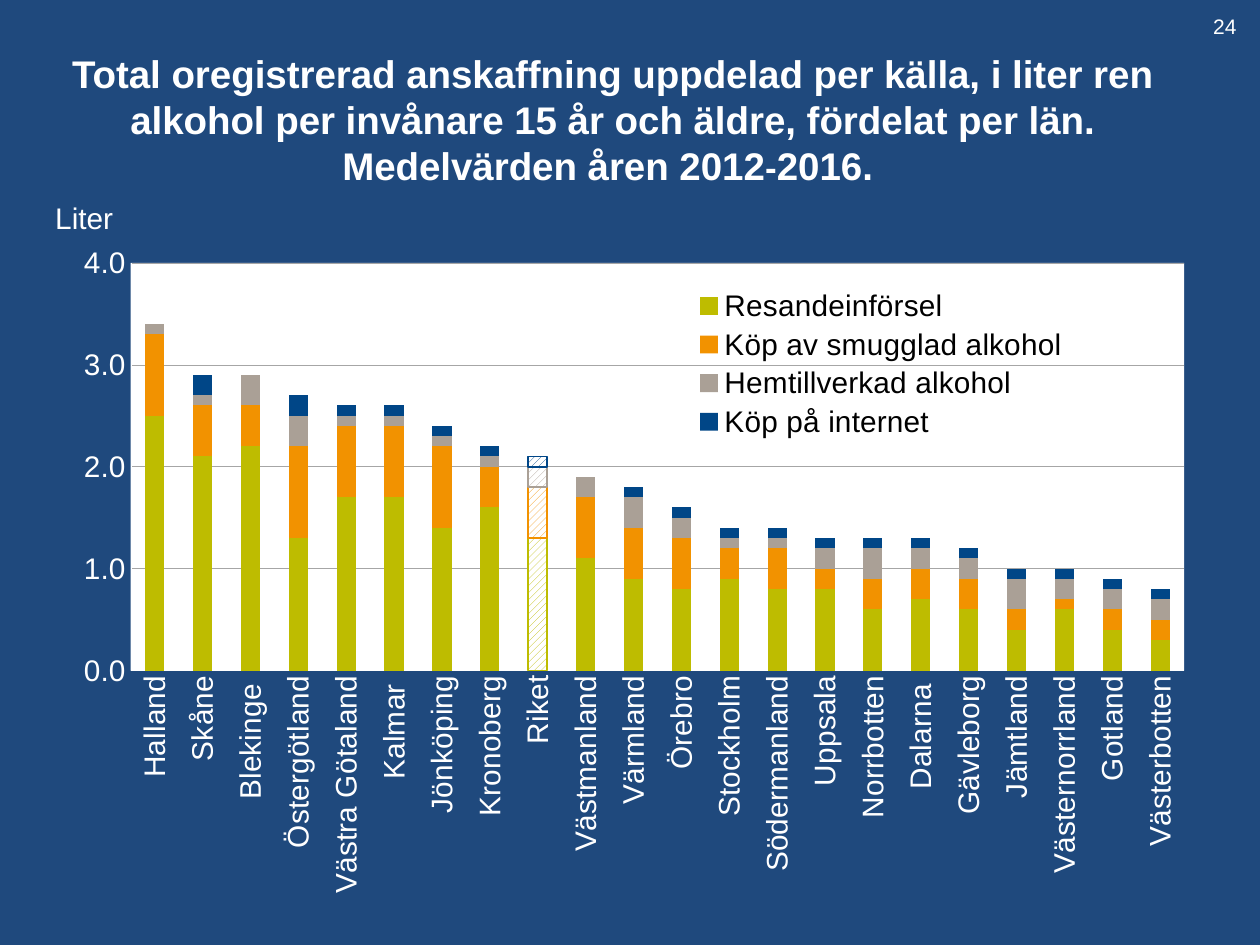
from lxml import etree
from pptx import Presentation, util as u
from pptx.chart.data import CategoryChartData
from pptx.dml.color import RGBColor
from pptx.enum import chart as ch, dml, text
from pptx.oxml import parse_xml
from pptx.oxml.ns import nsdecls, qn

theme = {
    "back": "1F497D", "white": "FFFFFF", "black": "000000", "grid": "A6A6A6",
    "series": ["BEBC00", "F29200", "AAA096", "004687"],
    "font": "Arial", "title": 22, "dash": 20, "label": 17, "number": 12,
}


def style(font, size, color, bold=False):
    font.name, font.size, font.bold = theme["font"], u.Pt(size), bold
    font.color.rgb = RGBColor.from_string(theme[color])


def place(parent, index, box, target=""):
    for old in parent.findall(qn("c:layout")):
        parent.remove(old)
    layout = etree.Element(qn("c:layout"))
    manual = etree.SubElement(layout, qn("c:manualLayout"))
    items = [("layoutTarget", target)] if target else []
    items += [("xMode", "edge"), ("yMode", "edge"), *zip("xywh", box)]
    for tag, value in items:
        etree.SubElement(manual, qn("c:" + tag)).set("val", str(value))
    parent.insert(index, layout)


prs = Presentation()
prs.slide_width, prs.slide_height = u.Inches(10), u.Inches(7.5)
s = prs.slides.add_slide(prs.slide_layouts[5])
s.background.fill.solid()
s.background.fill.fore_color.rgb = RGBColor.from_string(theme["back"])

title = s.shapes.title
title.left, title.top = u.Inches(0.17), u.Inches(0.32)
title.width, title.height = u.Inches(9.39), u.Inches(1.25)
tf = title.text_frame
tf.auto_size = text.MSO_AUTO_SIZE.NONE
tf.vertical_anchor = text.MSO_ANCHOR.MIDDLE
p = tf.paragraphs[0]
p.alignment = text.PP_ALIGN.CENTER
for words, size in [
    ("Total oregistrerad anskaffning uppdelad per källa, i liter ren alkohol per "
     "invånare 15 år och äldre, fördelat per län. Medelvärden åren 2012", "title"),
    ("-", "dash"),
    ("2016. ", "title"),
]:
    r = p.add_run()
    r.text = words
    style(r.font, theme[size], "white", True)

counties = [
    "Halland", "Skåne", "Blekinge ", "Östergötland", "Västra Götaland", "Kalmar ",
    "Jönköping", "Kronoberg", "Riket", "Västmanland", "Värmland", "Örebro",
    "Stockholm", "Södermanland", "Uppsala", "Norrbotten", "Dalarna ", "Gävleborg",
    "Jämtland", "Västernorrland", "Gotland", "Västerbotten",
]
sources = {
    "Resandeinförsel": [2.5, 2.1, 2.2, 1.3, 1.7, 1.7, 1.4, 1.6, 1.3, 1.1, 0.9,
                        0.8, 0.9, 0.8, 0.8, 0.6, 0.7, 0.6, 0.4, 0.6, 0.4, 0.3],
    "Köp av smugglad alkohol": [0.8, 0.5, 0.4, 0.9, 0.7, 0.7, 0.8, 0.4, 0.5, 0.6, 0.5,
                                0.5, 0.3, 0.4, 0.2, 0.3, 0.3, 0.3, 0.2, 0.1, 0.2, 0.2],
    "Hemtillverkad alkohol": [0.1, 0.1, 0.3, 0.3, 0.1, 0.1, 0.1, 0.1, 0.2, 0.2, 0.3,
                              0.2, 0.1, 0.1, 0.2, 0.3, 0.2, 0.2, 0.3, 0.2, 0.2, 0.2],
    "Köp på internet": [0, 0.2, 0, 0.2, 0.1, 0.1, 0.1, 0.1, 0.1, 0, 0.1,
                        0.1, 0.1, 0.1, 0.1, 0.1, 0.1, 0.1, 0.1, 0.1, 0.1, 0.1],
}
data = CategoryChartData(number_format="#,##0.0")
data.categories = counties
for name, values in sources.items():
    data.add_series(name, values)
chart = s.shapes.add_chart(
    ch.XL_CHART_TYPE.COLUMN_STACKED, u.Inches(0.35), u.Inches(1.57),
    u.Inches(9.29), u.Inches(5.73), data).chart
chart.has_title = False
style(chart.font, theme["label"], "white")

plot = chart.plots[0]
plot.gap_width, plot.overlap, plot.vary_by_categories = 150, 100, False
country = counties.index("Riket")
for series, code in zip(plot.series, theme["series"]):
    color = RGBColor.from_string(code)
    series.format.fill.solid()
    series.format.fill.fore_color.rgb = color
    point = series.points[country].format
    point.fill.patterned()
    point.fill.pattern = dml.MSO_PATTERN.WIDE_UPWARD_DIAGONAL
    point.fill.fore_color.rgb = color
    point.fill.back_color.rgb = RGBColor.from_string(theme["white"])
    point.line.color.rgb = color
    point.line.width = u.Pt(1)

for axis, width in [(chart.category_axis, 0.75), (chart.value_axis, 0.22)]:
    axis.major_tick_mark = axis.minor_tick_mark = ch.XL_TICK_MARK.NONE
    style(axis.tick_labels.font, theme["label"], "white")
    axis.format.line.color.rgb = RGBColor.from_string(theme["white"])
    axis.format.line.width = u.Pt(width)
body = chart.category_axis._element.find(qn("c:txPr")).find(qn("a:bodyPr"))
body.set("rot", "-5400000")
body.set("vert", "horz")

axis = chart.value_axis
axis.minimum_scale, axis.maximum_scale, axis.major_unit = 0, 4, 1
axis.tick_labels.number_format = "#,##0.0"
axis.tick_labels.number_format_is_linked = False
axis.has_major_gridlines = True
axis.major_gridlines.format.line.color.rgb = RGBColor.from_string(theme["grid"])
axis.major_gridlines.format.line.width = u.Pt(0.22)

area = chart._chartSpace.chart.plotArea
place(area, 0, (0.074, 0.09, 0.9, 0.565), "inner")
area.append(parse_xml(
    f'<c:spPr {nsdecls("c", "a")}><a:solidFill><a:srgbClr val="{theme["white"]}"/>'
    '</a:solidFill><a:ln><a:noFill/></a:ln></c:spPr>'))

chart.has_legend = True
legend = chart.legend
legend.position = ch.XL_LEGEND_POSITION.TOP
legend.include_in_layout = True
style(legend.font, theme["label"], "black")
place(legend._element, 1, (0.55, 0.12, 0.33, 0.22))

for words, box, size, wrap, anchor in [
    ("24", (9.53, 0.06, 0.47, 0.3), "number", True, text.MSO_ANCHOR.TOP),
    ("Liter", (0.34, 1.53, 0.67, 0.39), "label", False, text.MSO_ANCHOR.MIDDLE),
]:
    tf = s.shapes.add_textbox(*map(u.Inches, box)).text_frame
    tf.word_wrap, tf.vertical_anchor = wrap, anchor
    tf.auto_size = text.MSO_AUTO_SIZE.SHAPE_TO_FIT_TEXT
    r = tf.paragraphs[0].add_run()
    r.text = words
    style(r.font, theme[size], "white")

prs.save("out.pptx")
